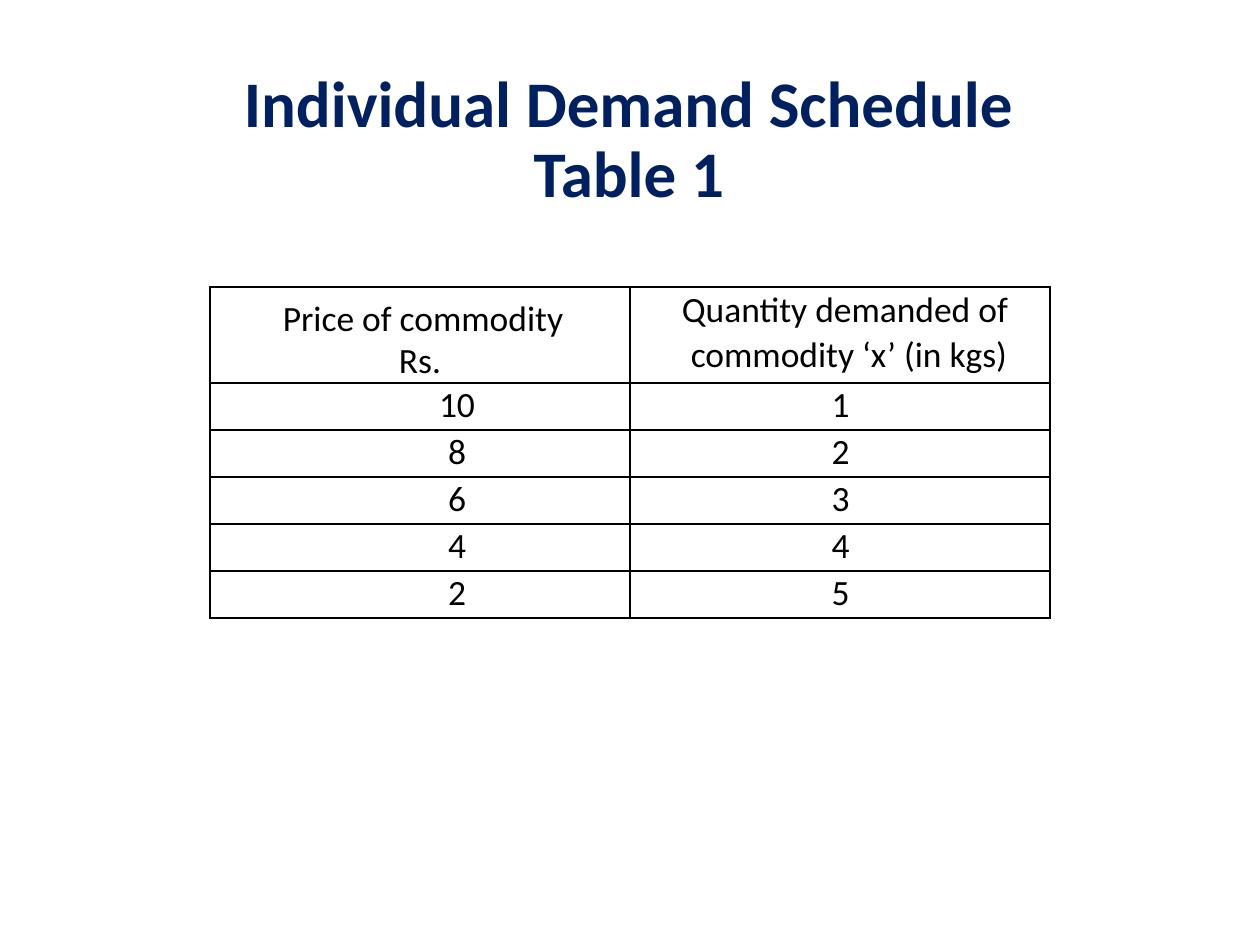
"""Build the slide with the individual demand schedule."""
from pptx import Presentation
from pptx.dml.color import RGBColor as Rgb
from pptx.enum.text import MSO_ANCHOR as Anchor, PP_ALIGN as Align
from pptx.oxml import parse_xml
from pptx.oxml.ns import nsdecls
from pptx.util import Pt
from dataclasses import dataclass

TITLE = "Individual Demand Schedule\vTable 1"
HEADS = (
    [("Price of commodity", 6, Pt(36.5)), ("Rs.", 0, Pt(28.5))],
    [("Quantity demanded of", 10, 1.03), ("commodity ‘x’ (in kgs)", 18, 1.03)],
)
ROWS = [(10, 1), (8, 2), (6, 3), (4, 4), (2, 5)]
INDENTS = (74, 1)


@dataclass(frozen=True)
class Theme:
    font: str = "Calibri"
    navy: str = "002060"
    black: str = "000000"
    title: int = 44
    body: int = 24
    line: int = 1


THEME = Theme()
SCALE = 914400 / 106.4


def px(n):
    return round(n * SCALE)


def style(para, size, color, bold=False):
    para.alignment = Align.CENTER
    font = para.font
    font.name, font.size, font.bold = THEME.font, Pt(size), bold
    font.color.rgb = Rgb.from_string(color)


def frame(cell):
    cell.fill.background()
    props = cell._tc.get_or_add_tcPr()
    for i, side in enumerate(("lnL", "lnR", "lnT", "lnB")):
        props.insert(i, parse_xml(
            f'<a:{side} {nsdecls("a")} w="{Pt(THEME.line)}"><a:solidFill>'
            f'<a:srgbClr val="{THEME.black}"/></a:solidFill></a:{side}>'))


def write(cell, lines, top):
    cell.margin_left = cell.margin_right = cell.margin_bottom = 0
    cell.margin_top = px(top)
    text = cell.text_frame
    for i, (words, indent, space) in enumerate(lines):
        para = text.add_paragraph() if i else text.paragraphs[0]
        para.text = words
        para._p.get_or_add_pPr().set("marL", str(px(indent)))
        para.line_spacing = space
        style(para, THEME.body, THEME.black)
    frame(cell)


def main():
    deck = Presentation()
    deck.slide_width, deck.slide_height = px(1260), px(945)
    shapes = deck.slides.add_slide(deck.slide_layouts[6]).shapes

    text = shapes.add_textbox(px(86), px(50), px(1086), px(183)).text_frame
    text.word_wrap = True
    text.vertical_anchor = Anchor.MIDDLE
    head = text.paragraphs[0]
    head.text = TITLE
    head.line_spacing = 0.9
    style(head, THEME.title, THEME.navy, True)

    table = shapes.add_table(len(ROWS) + 1, 2, px(210), px(287),
                             px(840), px(331)).table
    table.first_row = table.horz_banding = False
    for r, row in enumerate(table.rows):
        row.height = px(47 if r else 96)
    for c, lines in enumerate(HEADS):
        write(table.cell(0, c), lines, c)
        for r, row in enumerate(ROWS, 1):
            write(table.cell(r, c), [(str(row[c]), INDENTS[c], 1.0)], 1)

    deck.save("out.pptx")


if __name__ == "__main__":
    main()
